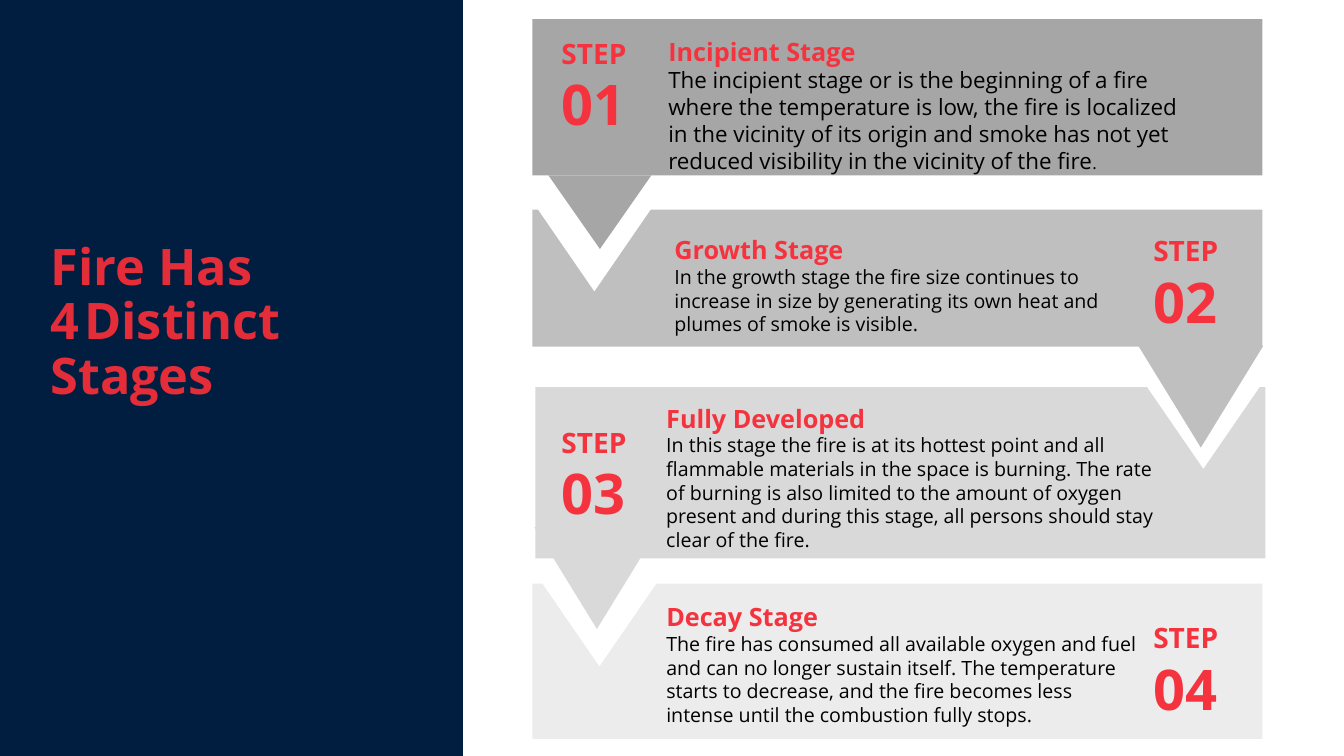
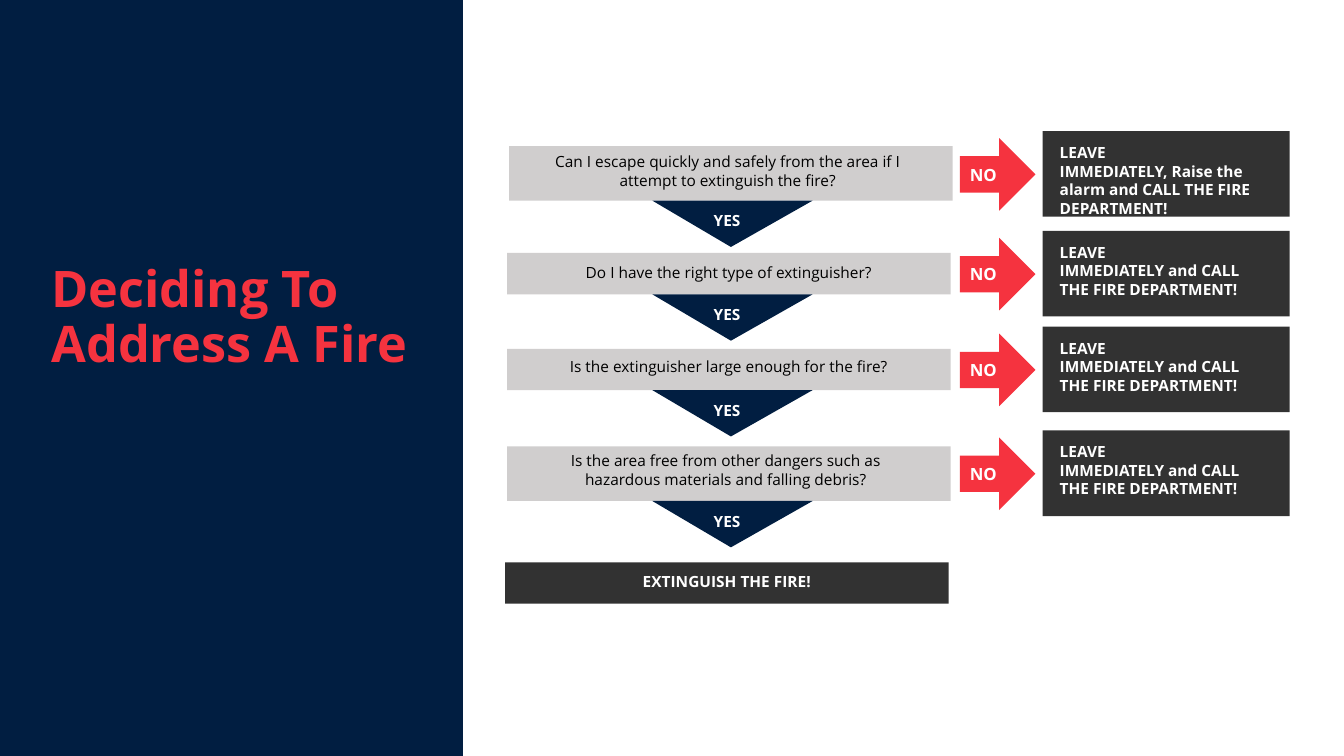
from pptx import Presentation
from pptx.dml.color import RGBColor
from pptx.enum.shapes import MSO_SHAPE as SHAPE
from pptx.enum.text import MSO_ANCHOR as ANCHOR, MSO_AUTO_SIZE as AUTO, PP_ALIGN as ALIGN
from pptx.util import Pt

PX = 9144  # 100 px to the inch
FONT = "Open Sans"
HEX = {
    "navy": "011E41", "red": "F5333F", "brick": "E42D38", "dark": "323232",
    "white": "FFFFFF", "black": "000000", "ash": "D0CECE",
    "gray1": "A6A6A6", "gray2": "BFBFBF", "gray3": "D9D9D9", "gray4": "ECECEC",
}

# Titles: a paragraph is a list of (text, format changes)
STAGES_TITLE = [
    [("Fire Has", {})],
    [("4", {}), (" ", {"size": 14, "bold": False}), ("Distinct", {})],
    [("Stages", {})],
]
DECIDE_TITLE = [[("Deciding To Address A Fire", {})]]

# Stages: fill, band box, step place, text box, body size, head, body, tail
STAGES = [
    ("gray1", (528, 19, 724, 155), (547, 31), (653, 31, 542, 148), 16, "Incipient Stage",
     "The incipient stage or is the beginning of a fire where the temperature is low, "
     "the fire is localized in the vicinity of its origin and smoke has not yet "
     "reduced visibility in the vicinity of the fire", "."),
    ("gray2", (528, 208, 724, 136), (1134, 227), (659, 228, 475, 111), 14, "Growth Stage",
     "In the growth stage the fire size continues to increase in size by generating "
     "its own heat and plumes of smoke is visible.", ""),
    ("gray3", (531, 384, 724, 170), (547, 417), (651, 395, 514, 158), 14, "Fully Developed",
     "In this stage the fire is at its hottest point and all flammable materials in the "
     "space is burning. The rate of burning is also limited to the amount of oxygen "
     "present and during this stage, all persons should stay clear of the fire.", ""),
    ("gray4", (528, 579, 724, 154), (1134, 611), (651, 592, 489, 135), 14, "Decay Stage",
     "The fire has consumed all available oxygen and fuel and can no longer sustain "
     "itself. The temperature starts to decrease, and the fire becomes less intense "
     "until the combustion fully stops.", ""),
]
# Pointers: white notch place, tip fill, tip box
POINTS = [
    ((531, 204), "gray1", (544, 174, 102, 73)),
    ((1135, 380), "gray2", (1129, 343, 124, 101)),
    ((536, 576), "gray3", (530, 523, 124, 101)),
]

# Questions: place, height, text place, question, top of exit box, order
CALL = "IMMEDIATELY and CALL THE FIRE DEPARTMENT!"
ASKS = [
    ((505, 145), 54, (519, 146), "Can I escape quickly and safely from the area if I "
     "attempt to extinguish the fire?", 130,
     "IMMEDIATELY, Raise the alarm and CALL THE FIRE DEPARTMENT!"),
    ((503, 251), 41, (520, 256), "Do I have the right type of extinguisher?", 229, CALL),
    ((503, 346), 41, (520, 349), "Is the extinguisher large enough for the fire?", 324, CALL),
    ((503, 443), 54, (517, 443), "Is the area free from other dangers such as hazardous "
     "materials and falling debris?", 427, CALL),
]
ASK_W, TEXT_W = 440, 406


def tone(name):
    return RGBColor.from_string(HEX[name])


def write(frame, paras, size=11, color="white", bold=False, align=ALIGN.LEFT,
          anchor=ANCHOR.TOP, space=None, pad=(10, 5, 10, 5)):
    """Fill a text frame; each run may override size, color and bold."""
    frame.word_wrap = True
    frame.auto_size = AUTO.NONE
    frame.vertical_anchor = anchor
    sides = [n * PX for n in pad]
    frame.margin_left, frame.margin_top, frame.margin_right, frame.margin_bottom = sides
    for i, runs in enumerate(paras):
        para = frame.add_paragraph() if i else frame.paragraphs[0]
        para.alignment = align
        if space:
            para.line_spacing = space
        for words, diff in runs:
            look = {"size": size, "color": color, "bold": bold, **diff}
            run = para.add_run()
            run.text = words
            run.font.name = FONT
            run.font.size = Pt(look["size"])
            run.font.bold = look["bold"]
            run.font.color.rgb = tone(look["color"])


def draw(slide, kind, box, fill, turn=0):
    shape = slide.shapes.add_shape(kind, *[n * PX for n in box])
    shape.shadow.inherit = False
    shape.fill.solid()
    shape.fill.fore_color.rgb = tone(fill)
    shape.line.fill.background()
    shape.rotation = turn
    return shape


def label(slide, box, paras, **look):
    note = slide.shapes.add_textbox(*[n * PX for n in box])
    write(note.text_frame, paras, **look)


def start(deck, box, paras, color):
    slide = deck.slides.add_slide(deck.slide_layouts[5])
    title = slide.shapes.title
    title.left, title.top, title.width, title.height = [n * PX for n in box]
    write(title.text_frame, paras, size=36, color=color, bold=True,
          anchor=ANCHOR.MIDDLE, space=0.9)
    return slide


def stages(deck):
    slide = start(deck, (40, 75, 391, 492), STAGES_TITLE, "brick")
    # Side panel, moved to the layout so that every slide shows it
    panel = draw(slide, SHAPE.RECTANGLE, (0, 0, 459, 750), "navy")
    deck.slide_layouts[5].shapes.element.insert(2, panel.element)

    # Bands, then the pointers that link them
    for fill, band, *rest in STAGES:
        draw(slide, SHAPE.RECTANGLE, band, fill)
    for (x, y), fill, tip in POINTS:
        draw(slide, SHAPE.ISOSCELES_TRIANGLE, (x, y, 117, 85), "white", 180)
        draw(slide, SHAPE.ISOSCELES_TRIANGLE, tip, fill, 180)

    # Step numbers and texts
    for n, (fill, band, (x, y), box, size, head, body, tail) in enumerate(STAGES, 1):
        label(slide, (x, y, 118, 111), [[("STEP", {})], [(f"{n:02}", {"size": 40})]],
              size=20, color="red", bold=True)
        runs = [(body, {})]
        if tail:
            runs.append((tail, {"size": 12}))
        top = {"size": 18, "color": "red", "bold": True}
        label(slide, box, [[(head, top)], runs], size=size, color="black")


def decide(deck):
    slide = start(deck, (41, 70, 376, 492), DECIDE_TITLE, "red")
    for (x, y), high, (tx, ty), ask, top, order in ASKS:
        # Question
        left = tx - x + 10
        pad = (left, ty - y + 5, ASK_W - TEXT_W + 20 - left, 0)
        bar = draw(slide, SHAPE.RECTANGLE, (x, y, ASK_W, high), "ash")
        write(bar.text_frame, [[(ask, {})]], color="black", align=ALIGN.CENTER, pad=pad)

        # Yes: on to the next row
        low = y + high
        tip = draw(slide, SHAPE.ISOSCELES_TRIANGLE, (647, low, 159, 46), "navy", 180)
        tip.adjustments[0] = 0.51
        label(slide, (698, low + 6, 57, 29), [[("YES", {})]], bold=True)

        # No: out to the exit box
        arrow = draw(slide, SHAPE.RIGHT_ARROW, (952, top + 7, 75, 72), "red")
        write(arrow.text_frame, [[("NO", {})]], size=12, bold=True,
              anchor=ANCHOR.MIDDLE, pad=(10, 0, 0, 0))
        leave = draw(slide, SHAPE.RECTANGLE, (1034, top, 245, 85), "dark")
        write(leave.text_frame, [[("LEAVE", {})], [(order, {})]], bold=True,
              pad=(17, 12, 17, 0))

    # Last row
    last = draw(slide, SHAPE.RECTANGLE, (501, 558, ASK_W, 41), "dark")
    write(last.text_frame, [[("EXTINGUISH THE FIRE!", {})]], bold=True,
          align=ALIGN.CENTER, pad=(10, 10, 10, 0))


def main():
    deck = Presentation()
    deck.slide_width, deck.slide_height = 1333 * PX, 750 * PX
    stages(deck)
    decide(deck)
    deck.save("out.pptx")


if __name__ == "__main__":
    main()
